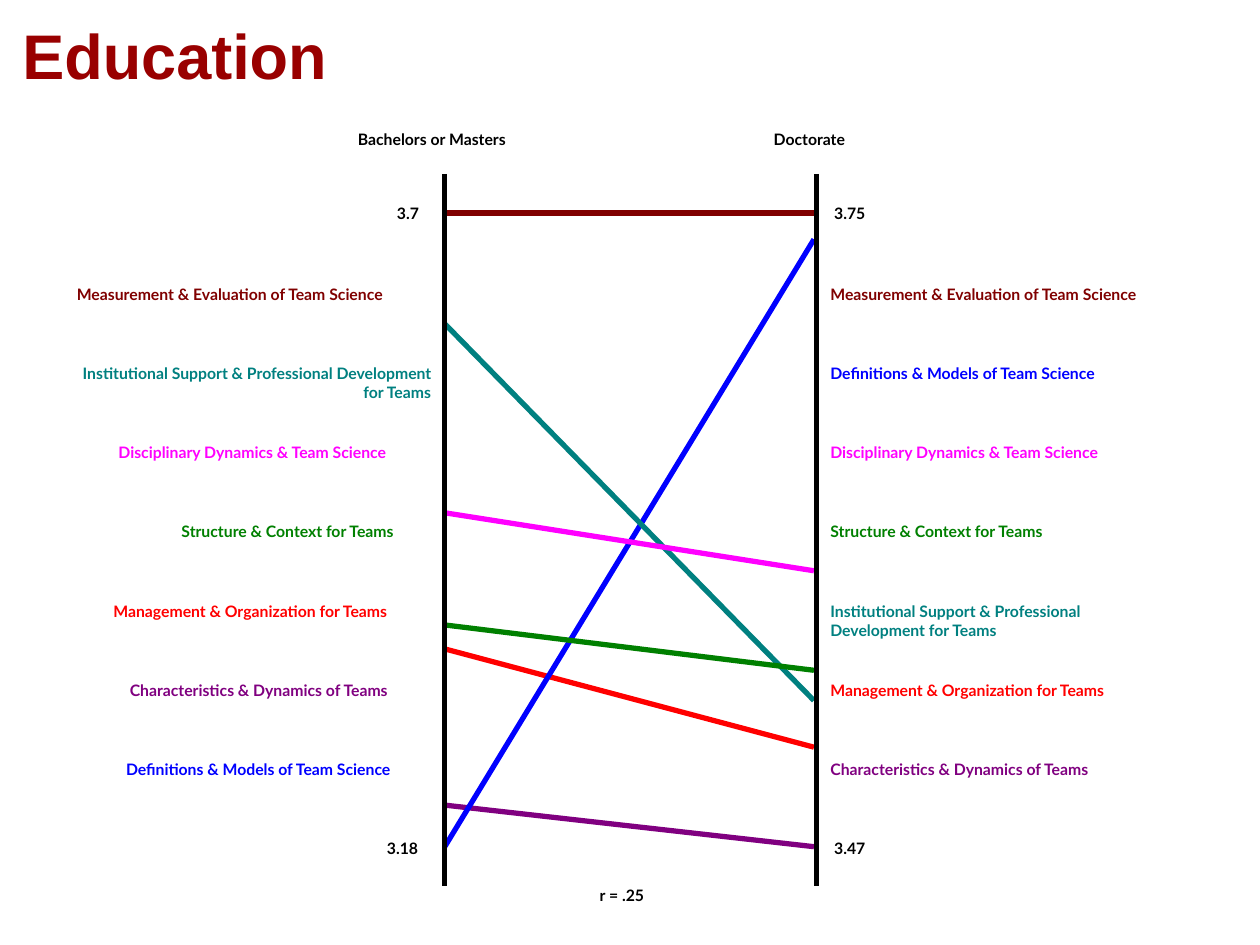
from collections import namedtuple

from lxml import etree
from pptx import Presentation
from pptx.dml.color import RGBColor
from pptx.enum import shapes, text
from pptx.oxml.ns import qn
from pptx.util import Inches, Pt

BLACK = RGBColor(0x00, 0x00, 0x00)
TITLE_RED = RGBColor(0x99, 0x00, 0x00)
RED = RGBColor(0xFF, 0x00, 0x00)
PURPLE = RGBColor(0x80, 0x00, 0x80)
BLUE = RGBColor(0x00, 0x00, 0xFF)
TEAL = RGBColor(0x00, 0x80, 0x80)
MAGENTA = RGBColor(0xFF, 0x00, 0xFF)
MAROON = RGBColor(0x80, 0x00, 0x00)
GREEN = RGBColor(0x00, 0x80, 0x00)

# Line ends are inches below the top of the axes; widths are for the labels.
Topic = namedtuple("Topic", "name color start end left_width right_width wraps",
                   defaults=[False])
TOPICS = [
    Topic("Management & Organization for Teams", RED, 3.77, 4.55, 2.52, 2.52),
    Topic("Characteristics & Dynamics of Teams", PURPLE, 5.01, 5.34, 2.39, 2.39),
    Topic("Definitions & Models of Team Science", BLUE, 5.34, 0.52, 2.42, 2.42),
    Topic("Institutional Support & Professional Development for Teams",
          TEAL, 1.19, 4.18, 2.84, 2.49, True),
    Topic("Disciplinary Dynamics & Team Science", MAGENTA, 2.69, 3.15, 2.48, 2.48),
    Topic("Measurement & Evaluation of Team Science", MAROON, 0.31, 0.31, 2.81, 2.81),
    Topic("Structure & Context for Teams", GREEN, 3.58, 3.94, 1.98, 1.98),
]
AXIS_HEIGHT = 5.65
LABEL_GAP = 0.11
LABEL_HEIGHT = 0.19
FIRST_ROW, ROW_STEP = 0.88, 0.628
HIGH_ROW, LOW_ROW = 0.24, 5.28


def add_title(slide, left, top, width, height):
    box = slide.shapes.add_textbox(Inches(left), Inches(top), Inches(width), Inches(height))
    frame = box.text_frame
    frame.word_wrap = True
    frame.vertical_anchor = text.MSO_ANCHOR.MIDDLE
    run = frame.paragraphs[0].add_run()
    run.text = "Education"
    run.font.name, run.font.size, run.font.bold = "Arial", Pt(36), True
    run.font.color.rgb = TITLE_RED


def add_label(slide, words, left, top, width, color=BLACK, wraps=False, align=None):
    height = 0.31 if wraps else LABEL_HEIGHT
    box = slide.shapes.add_textbox(Inches(left), Inches(top), Inches(width), Inches(height))
    frame = box.text_frame
    frame.margin_left = frame.margin_right = frame.margin_top = frame.margin_bottom = 0
    frame.word_wrap = wraps
    frame.auto_size = text.MSO_AUTO_SIZE.SHAPE_TO_FIT_TEXT
    paragraph = frame.paragraphs[0]
    paragraph.alignment = align
    run = paragraph.add_run()
    run.text = words
    run.font.name, run.font.size, run.font.bold = "Lato", Pt(9), True
    run.font.color.rgb = color


def add_line(slide, x1, y1, x2, y2, color):
    line = slide.shapes.add_connector(
        shapes.MSO_CONNECTOR.STRAIGHT, Inches(x1), Inches(y1), Inches(x2), Inches(y2))
    line.line.color.rgb = color
    line.line.width = Pt(3)
    etree.SubElement(line._element.spPr, qn("a:effectLst"))


def add_ladder_graph(slide, left, top, width):
    """Draw the two axes at the sides of the box, with labels outside them."""
    right = left + width
    left_edge, right_edge = left - LABEL_GAP, right + LABEL_GAP

    add_label(slide, "r = .25", left + 1.23, top + AXIS_HEIGHT, 0.49)
    add_label(slide, "Bachelors or Masters", left - 0.69, top - 0.35, 1.38)
    add_label(slide, "Doctorate", right - 0.34, top - 0.35, 0.69)
    add_label(slide, " 3.7", left_edge - 0.3, top + HIGH_ROW, 0.3)
    add_label(slide, " 3.18", left_edge - 0.38, top + LOW_ROW, 0.38)
    add_label(slide, " 3.75", right_edge, top + HIGH_ROW, 0.38)
    add_label(slide, " 3.47", right_edge, top + LOW_ROW, 0.38)

    left_ranks = sorted(TOPICS, key=lambda topic: topic.start)
    right_ranks = sorted(TOPICS, key=lambda topic: topic.end)
    for topic in TOPICS:
        add_line(slide, left, top + topic.start, right - 0.02, top + topic.end, topic.color)
        left_row = top + FIRST_ROW + ROW_STEP * left_ranks.index(topic)
        right_row = top + FIRST_ROW + ROW_STEP * right_ranks.index(topic)
        add_label(slide, topic.name, left_edge - topic.left_width, left_row,
                  topic.left_width, topic.color, topic.wraps,
                  text.PP_ALIGN.RIGHT if topic.wraps else None)
        add_label(slide, topic.name, right_edge, right_row,
                  topic.right_width, topic.color, topic.wraps)

    for axis in (left, right):
        add_line(slide, axis, top, axis, top + AXIS_HEIGHT, BLACK)


def main():
    deck = Presentation()
    deck.slide_width, deck.slide_height = Inches(10), Inches(7.5)
    slide = deck.slides.add_slide(deck.slide_layouts[6])
    add_title(slide, 0.08, 0.08, 9.83, 0.7)
    add_ladder_graph(slide, 3.53, 1.38, 2.95)
    deck.save("out.pptx")


if __name__ == "__main__":
    main()
